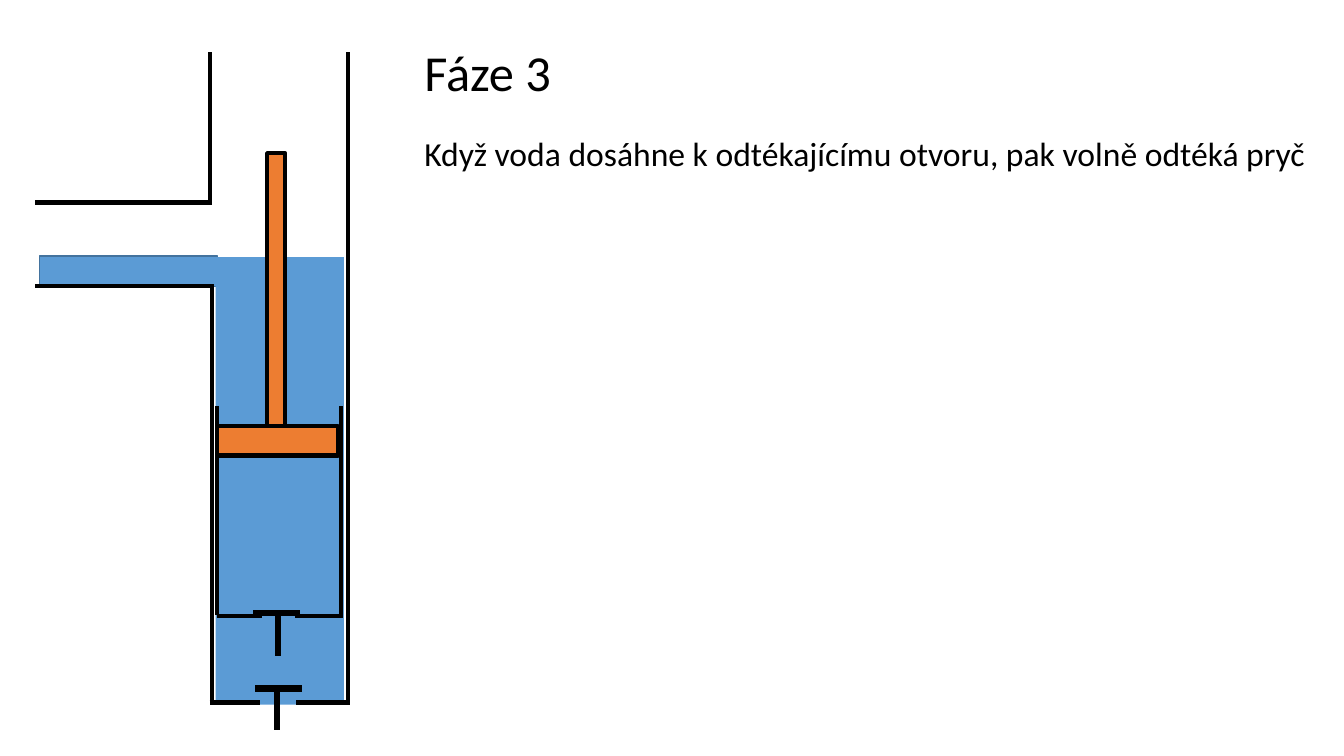
from dataclasses import dataclass

from lxml.etree import SubElement
from pptx import Presentation
from pptx.dml.color import RGBColor
from pptx.enum.shapes import MSO_CONNECTOR, MSO_SHAPE
from pptx.enum.text import MSO_AUTO_SIZE
from pptx.oxml.ns import qn
from pptx.util import Inches, Pt


@dataclass(frozen=True)
class Theme:
    font: str = "Calibri"
    ink: str = "000000"
    water: str = "5B9BD5"
    water_edge: str = "43739E"
    piston: str = "ED7D31"
    heading: int = 36
    body: int = 24
    gap: int = 22
    edge: float = 1
    wall: float = 3
    valve: float = 4.5


THEME = Theme()
CELL = 0.1  # inches per grid cell; every length below is in cells

HEADING = "Fáze 3"
BODY = "Když voda dosáhne k odtékajícímu otvoru, pak volně odtéká pryč"
TEXT_AREA = (41.1, 3.6, 90.1, 14.1)

# Levels shared by several parts of the pump
TOP, SPOUT_TOP, SPOUT_FLOOR, FLOOR = 5.2, 20.1, 28.4, 69.7
LEFT, RIGHT, SPOUT_END = 21, 34.5, 3.5
CYLINDER_TOP, CYLINDER_FLOOR = 40.3, 61.1
CYLINDER_LEFT, CYLINDER_RIGHT = 21.5, 33.8
PISTON_TOP = 42.3
ROD_TOP = 15.2

# Rectangles: left, top, width, height
SPOUT_WATER = (3.9, 25.4, 17.7, 3)
SHAFT_WATER = (21.4, 25.5, 12.7, 44.4)
PISTON_PARTS = [
    (CYLINDER_LEFT, PISTON_TOP, 12, 2.9),
    (26.5, ROD_TOP, 1.8, PISTON_TOP - ROD_TOP),
]

# Lines: start x, start y, end x, end y
WELL_WALLS = [
    (LEFT, SPOUT_FLOOR, LEFT, FLOOR),
    (RIGHT, TOP, RIGHT, FLOOR),
    (SPOUT_END, SPOUT_TOP, LEFT, SPOUT_TOP),
    (SPOUT_END, SPOUT_FLOOR, 21.2, SPOUT_FLOOR),
    (20.8, FLOOR, 25.8, FLOOR),
    (29.4, FLOOR, 34.7, FLOOR),
    (20.8, TOP, 20.8, SPOUT_TOP),
]
CYLINDER_WALLS = [
    (CYLINDER_LEFT, CYLINDER_TOP, CYLINDER_LEFT, 61),
    (CYLINDER_RIGHT, CYLINDER_TOP, CYLINDER_RIGHT, 61),
    (CYLINDER_LEFT, CYLINDER_FLOOR, 26, CYLINDER_FLOOR),
    (29.3, CYLINDER_FLOOR, 34, CYLINDER_FLOOR),
]

# Valves: lid left, lid level, stem x, stem bottom
WELL_VALVE = (25.3, 68.3, 27.5, 72.4)
CYLINDER_VALVE = (25.1, 60.8, 27.6, 65.1)
LID_WIDTH = 4.7


def cells(*lengths):
    return [Inches(length * CELL) for length in lengths]


def color(code):
    return RGBColor.from_string(code)


def add_block(shapes, area, fill, line=None, width=0):
    block = shapes.add_shape(MSO_SHAPE.RECTANGLE, *cells(*area))
    block.shadow.inherit = False
    block.fill.solid()
    block.fill.fore_color.rgb = color(fill)
    if line:
        block.line.color.rgb = color(line)
        block.line.width = Pt(width)
    else:
        block.line.fill.background()


def add_lines(shapes, lines, width):
    for ends in lines:
        line = shapes.add_connector(MSO_CONNECTOR.STRAIGHT, *cells(*ends))
        line.line.color.rgb = color(THEME.ink)
        line.line.width = Pt(width)
        SubElement(line._element.spPr, qn("a:effectLst"))


def add_valve(shapes, lid_left, lid_level, stem, bottom):
    """Draw a T-shaped valve: a lid with a stem hanging below it."""
    lid = (lid_left, lid_level, lid_left + LID_WIDTH, lid_level)
    add_lines(shapes, [lid, (stem, lid_level, stem, bottom)], THEME.valve)


def add_text(shapes):
    box = shapes.add_textbox(*cells(*TEXT_AREA))
    frame = box.text_frame
    frame.word_wrap = True
    frame.auto_size = MSO_AUTO_SIZE.SHAPE_TO_FIT_TEXT
    frame.text = f"{HEADING}\n{BODY}"
    for para, size in zip(frame.paragraphs, (THEME.heading, THEME.body)):
        para.font.name = THEME.font
        para.font.size = Pt(size)
        para.font.color.rgb = color(THEME.ink)
    frame.paragraphs[1].space_before = Pt(THEME.gap)


def main():
    deck = Presentation()
    deck.slide_width, deck.slide_height = Inches(13.33), Inches(7.5)
    page = deck.slides.add_slide(deck.slide_layouts[6])

    add_block(page.shapes, SPOUT_WATER, THEME.water, THEME.water_edge, THEME.edge)
    add_block(page.shapes, SHAFT_WATER, THEME.water)

    well = page.shapes.add_group_shape().shapes
    add_lines(well, WELL_WALLS, THEME.wall)
    add_valve(well, *WELL_VALVE)

    cylinder = page.shapes.add_group_shape().shapes
    add_lines(cylinder, CYLINDER_WALLS, THEME.wall)
    for area in PISTON_PARTS:
        add_block(cylinder, area, THEME.piston, THEME.ink, THEME.wall)
    add_valve(cylinder, *CYLINDER_VALVE)

    add_text(page.shapes)
    deck.save("out.pptx")


if __name__ == "__main__":
    main()
